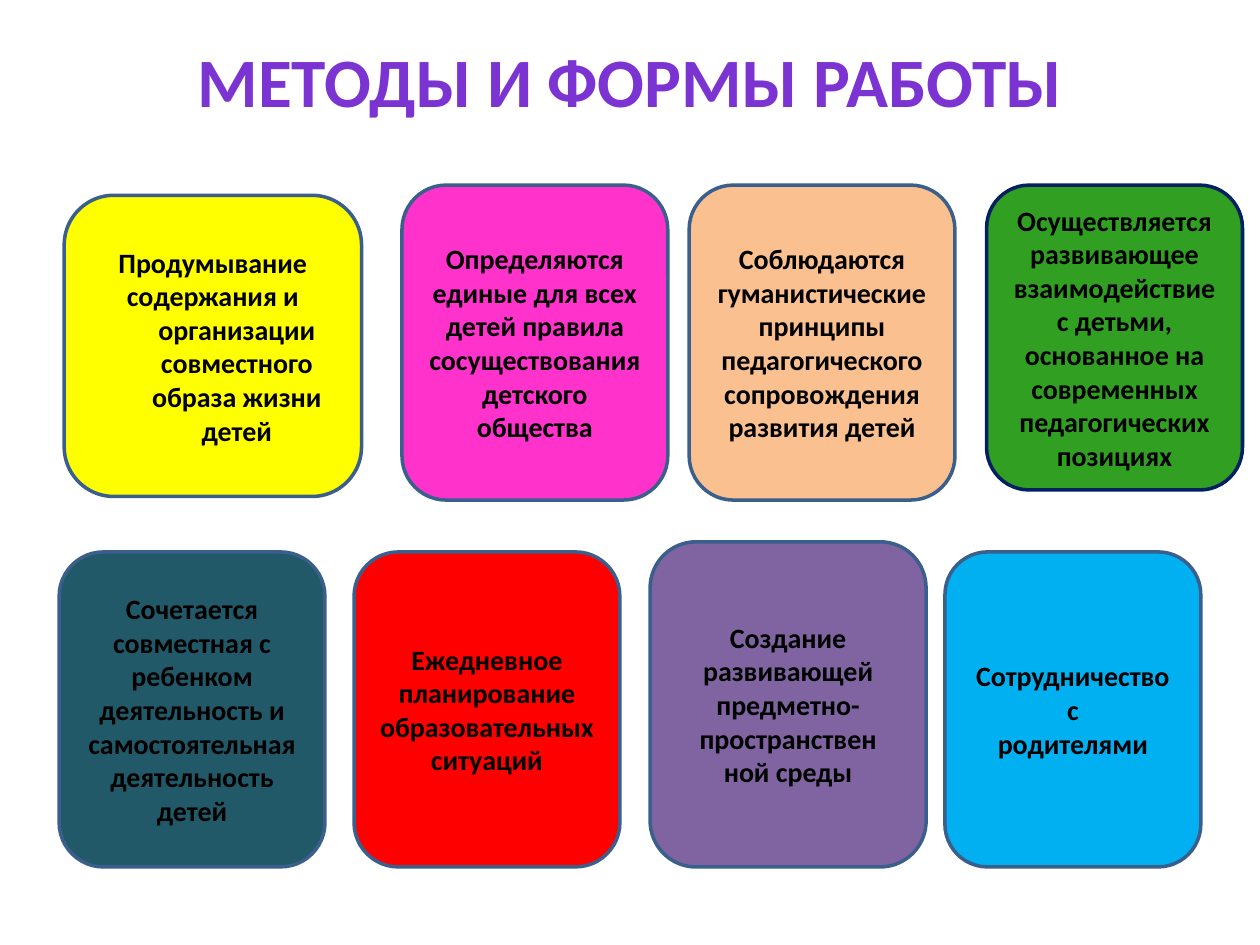
from lxml.etree import SubElement
from pptx import Presentation
from pptx.dml.color import RGBColor
from pptx.enum.shapes import MSO_SHAPE as Preset
from pptx.enum.text import MSO_ANCHOR as Anchor, MSO_AUTO_SIZE as AutoSize, PP_ALIGN as Align
from pptx.oxml.ns import qn
from pptx.util import Pt

CARD_BORDER = "3A5F8C"
HANGING = 27.4
CARDS = [
    ((229.7, 105.8, 151.9, 180), "FF33CC", CARD_BORDER,
     ["Определяются единые для всех детей правила сосуществования детского общества"]),
    ((393.8, 105.8, 151.9, 180), "FAC090", CARD_BORDER,
     ["Соблюдаются гуманистические принципы педагогического сопровождения развития детей"]),
    ((563.8, 105.8, 146.2, 174.2), "31A022", "002060",
     ["Осуществляется развивающее взаимодействие с детьми, основанное на современных "
      "педагогических позициях"]),
    ((33.8, 315.4, 151.9, 180), "215968", CARD_BORDER,
     ["Сочетается совместная с ребенком деятельность и самостоятельная деятельность детей"]),
    ((202.3, 315.4, 151.9, 180), "FF0000", CARD_BORDER,
     ["Ежедневное планирование образовательных ситуаций"]),
    ((371.5, 309.6, 157.7, 185.8), "8064A2", CARD_BORDER,
     ["Создание развивающей предметно- пространствен ной среды"]),
    ((540, 315.4, 146.2, 180), "00B0F0", CARD_BORDER,
     ["Сотрудничество с", "родителями"]),
]


def color(hex_code):
    """Turn a hex string into a colour."""
    return RGBColor.from_string(hex_code)


def place(holder, box):
    """Move and size a placeholder in points."""
    holder.left, holder.top, holder.width, holder.height = map(Pt, box)


def write(shape, lines, size=16, ink="000000", anchor=Anchor.MIDDLE, hanging=0):
    """Fill a shape with bold centred paragraphs."""
    frame = shape.text_frame
    frame.word_wrap = True
    frame.auto_size = AutoSize.NONE
    frame.vertical_anchor = anchor
    frame.text = "\n".join(lines)
    for paragraph in frame.paragraphs:
        if hanging:
            props = paragraph._p.get_or_add_pPr()
            props.set("marL", str(Pt(hanging)))
            props.set("indent", str(-Pt(hanging)))
            SubElement(props, qn("a:buNone"))
        paragraph.alignment = Align.CENTER
        paragraph.space_before = Pt(0)
        font = paragraph.runs[0].font
        font.name, font.size, font.bold = "Calibri", Pt(size), True
        font.color.rgb = color(ink)


def paint(shape, fill, border):
    """Give a card its fill and border."""
    shape.shadow.inherit = False
    shape.fill.solid()
    shape.fill.fore_color.rgb = color(fill)
    shape.line.color.rgb = color(border)
    shape.line.width = Pt(2)


def add_heading(slide, text):
    """Set the slide title."""
    heading = slide.shapes.title
    place(heading, (36, 21.6, 648, 90))
    heading.text_frame.margin_top = Pt(0)
    write(heading, [text], size=39.6, ink="7B34D2", anchor=Anchor.TOP)


def add_body_card(slide, box, fill, border, lines):
    """Turn the body placeholder into a rounded card."""
    card = slide.placeholders[1]
    place(card, box)
    outline = SubElement(card._element.spPr, qn("a:prstGeom"), prst="flowChartAlternateProcess")
    SubElement(outline, qn("a:avLst"))
    paint(card, fill, border)
    write(card, lines, hanging=HANGING)


def add_card(slide, box, fill, border, lines):
    """Add a rounded card with text."""
    card = slide.shapes.add_shape(Preset.FLOWCHART_ALTERNATE_PROCESS, *map(Pt, box))
    paint(card, fill, border)
    write(card, lines)


def main():
    """Build the slide and save it."""
    deck = Presentation()
    deck.slide_width, deck.slide_height = Pt(720), Pt(540)
    slide = deck.slides.add_slide(deck.slide_layouts[1])
    add_heading(slide, "МЕТОДЫ И ФОРМЫ РАБОТЫ")
    add_body_card(slide, (36.7, 111.6, 169.9, 172.1), "FFFF00", CARD_BORDER,
                  ["Продумывание",
                   "содержания и организации совместного образа жизни детей"])
    for card in CARDS:
        add_card(slide, *card)
    deck.save("out.pptx")


if __name__ == "__main__":
    main()
